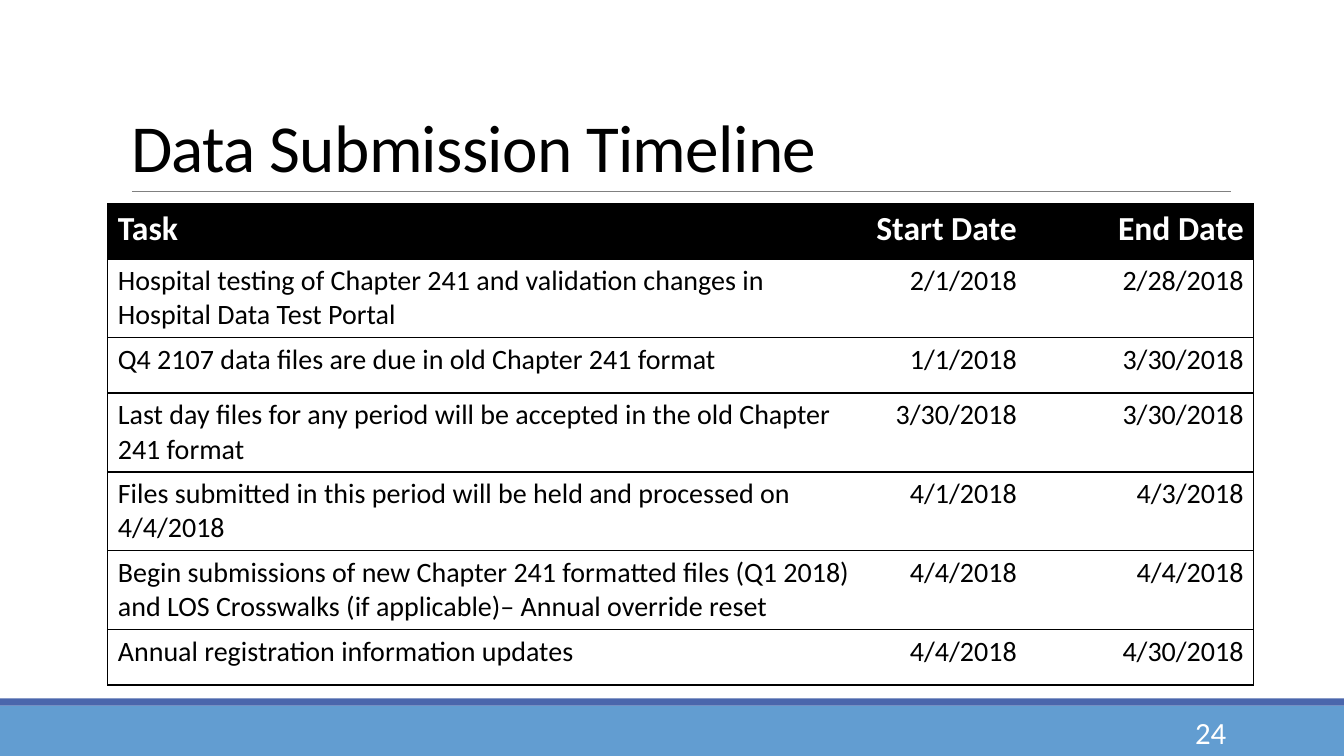
from lxml import etree
from pptx import Presentation
from pptx.dml.color import RGBColor
from pptx.enum import shapes, text
from pptx.oxml import ns
from pptx.util import Pt

HEADING = "Data Submission Timeline"
PAGE = "24"
HEADER = ("Task", "Start Date", "End Date")
TASKS = [
    ("Hospital testing of Chapter 241 and validation changes in Hospital Data Test Portal", "2/1/2018", "2/28/2018"),
    ("Q4 2107 data files are due in old Chapter 241 format", "1/1/2018", "3/30/2018"),
    ("Last day files for any period will be accepted in the old Chapter 241 format", "3/30/2018", "3/30/2018"),
    ("Files submitted in this period will be held and processed on 4/4/2018", "4/1/2018", "4/3/2018"),
    ("Begin submissions of new Chapter 241 formatted files (Q1 2018) and LOS Crosswalks (if applicable)"
     "– Annual override reset", "4/4/2018", "4/4/2018"),
    ("Annual registration information updates", "4/4/2018", "4/30/2018"),
]
BLACK, WHITE, GREY, LIGHT_BLUE, DARK_BLUE = "000000", "FFFFFF", "808080", "629DD1", "4A66AC"
FONT = "Calibri"
WIDTH, HEIGHT = 960, 540
COLUMNS = (540.7, 115.9, 162)
ONE_LINE, TWO_LINES, LINE_CHARS = 39.4, 56.4, 60
TABLE_LEFT, TABLE_TOP = 77, 145.6


def colour(value):
    return RGBColor.from_string(value)


def box(left, top, width, height):
    return Pt(left), Pt(top), Pt(width), Pt(height)


def write(frame, words, size, ink, align=text.PP_ALIGN.LEFT, bold=False):
    paragraph = frame.paragraphs[0]
    paragraph.alignment = align
    run = paragraph.add_run()
    run.text = words
    run.font.name, run.font.size, run.font.bold = FONT, Pt(size), bold
    run.font.color.rgb = colour(ink)
    return paragraph, run


def add_band(slide, top, height, fill):
    band = slide.shapes.add_shape(shapes.MSO_SHAPE.RECTANGLE, *box(0, top, WIDTH, height))
    band.shadow.inherit = False
    band.fill.solid()
    band.fill.fore_color.rgb = colour(fill)
    band.line.fill.background()


def set_borders(cell, visible):
    properties = cell._tc.get_or_add_tcPr()
    for place, side in enumerate("LRTB"):
        border = etree.Element(ns.qn(f"a:ln{side}"), w=str(Pt(1)))
        if side in visible:
            fill = etree.SubElement(border, ns.qn("a:solidFill"))
            etree.SubElement(fill, ns.qn("a:srgbClr"), val=BLACK)
        else:
            etree.SubElement(border, ns.qn("a:noFill"))
        properties.insert(place, border)


def add_title(slide):
    title = slide.shapes.title
    title.left, title.top, title.width, title.height = box(86.6, 22.6, 796, 114.2)
    title.text_frame.vertical_anchor = text.MSO_ANCHOR.BOTTOM
    title.text_frame.auto_size = text.MSO_AUTO_SIZE.NONE
    paragraph, run = write(title.text_frame, HEADING, 48, BLACK)
    paragraph.line_spacing = 0.85
    run.font._element.set("spc", "-50")

    rule = slide.shapes.add_connector(shapes.MSO_CONNECTOR.STRAIGHT, Pt(94.3), Pt(136.8), Pt(879), Pt(136.8))
    rule.line.color.rgb = colour(GREY)
    rule.line.width = Pt(0.5)
    etree.SubElement(rule._element.spPr, ns.qn("a:effectLst"))


def add_timeline(slide):
    rows = [HEADER] + TASKS
    heights = [TWO_LINES if len(row[0]) > LINE_CHARS else ONE_LINE for row in rows]
    area = box(TABLE_LEFT, TABLE_TOP, sum(COLUMNS), sum(heights))
    timeline = slide.shapes.add_table(len(rows), len(COLUMNS), *area).table
    timeline.horz_banding = False
    for column, width in zip(timeline.columns, COLUMNS):
        column.width = Pt(width)
    for r, row in enumerate(rows):
        timeline.rows[r].height = Pt(heights[r])
        size, ink, fill = (20, BLACK, WHITE) if r else (24, WHITE, BLACK)
        for c, words in enumerate(row):
            cell = timeline.cell(r, c)
            cell.fill.solid()
            cell.fill.fore_color.rgb = colour(fill)
            align = text.PP_ALIGN.RIGHT if c else text.PP_ALIGN.LEFT
            write(cell.text_frame, words, size, ink, align, bold=r == 0)
            set_borders(cell, "TB" + {0: "L", len(COLUMNS) - 1: "R"}.get(c, ""))


def add_page_number(slide):
    number = slide.shapes.add_textbox(*box(780, 508.6, 103, 28.8)).text_frame
    number.word_wrap = True
    number.vertical_anchor = text.MSO_ANCHOR.MIDDLE
    write(number, PAGE, 22, WHITE, text.PP_ALIGN.RIGHT)


def main():
    deck = Presentation()
    deck.slide_width, deck.slide_height = Pt(WIDTH), Pt(HEIGHT)
    slide = deck.slides.add_slide(deck.slide_layouts[5])
    add_band(slide, 504, 36, LIGHT_BLUE)
    add_band(slide, 498.8, 5.2, DARK_BLUE)
    add_title(slide)
    add_timeline(slide)
    add_page_number(slide)
    deck.save("out.pptx")


if __name__ == "__main__":
    main()
